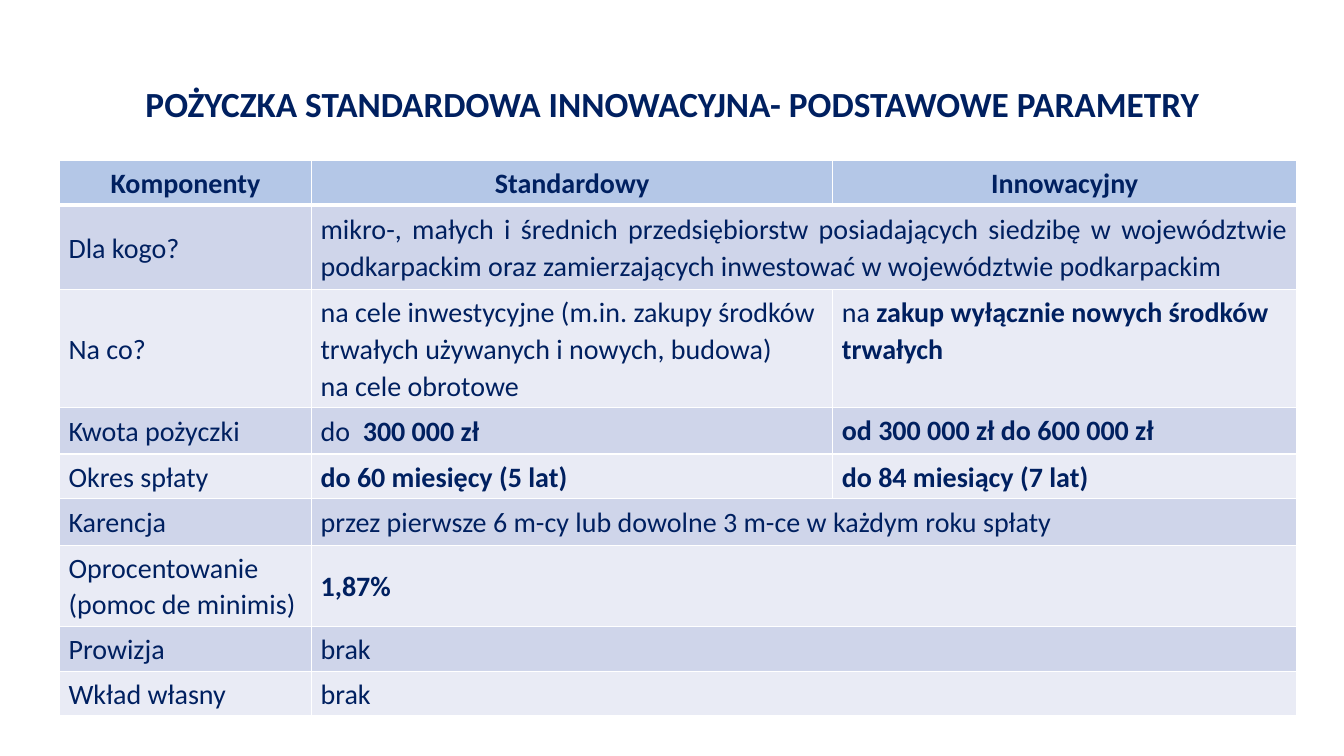
from lxml.etree import SubElement
from pptx import Presentation
from pptx.dml.color import RGBColor
from pptx.enum.text import MSO_ANCHOR as Anchor, MSO_AUTO_SIZE as AutoSize, PP_ALIGN as Align
from pptx.oxml.ns import qn
from pptx.util import Pt

PX = 9144
NAVY = RGBColor(0x00, 0x20, 0x60)
WHITE = RGBColor(0xFF, 0xFF, 0xFF)
HEADER_BLUE = RGBColor(0xB4, 0xC7, 0xE7)
BAND_DARK = RGBColor(0xCF, 0xD5, 0xEA)
BAND_LIGHT = RGBColor(0xE9, 0xEB, 0xF5)

TITLE = "POŻYCZKA STANDARDOWA INNOWACYJNA- PODSTAWOWE PARAMETRY "
TITLE_BOX = (96, 71, 1150, 68)
TABLE_BOX = (59, 159, 1227, 535)
COLUMN_WIDTHS = (250, 517, 460)
ROW_HEIGHTS = (42, 84, 113, 46, 42, 46, 78, 42, 42)
CELL_INSETS = {"margin_left": 9, "margin_top": 4, "margin_right": 9, "margin_bottom": 4}

# B
ROWS = (
    ("*Komponenty*", "*Standardowy*", "*Innowacyjny*"),
    ("Dla kogo?", "mikro-, małych i średnich przedsiębiorstw posiadających siedzibę w "
     "województwie podkarpackim oraz zamierzających inwestować w województwie podkarpackim"),
    ("Na co?", "na cele inwestycyjne (m.in. zakupy środków trwałych używanych i nowych, budowa)\n"
     "na cele obrotowe", "na *zakup wyłącznie nowych środków trwałych*"),
    ("Kwota pożyczki", "do  *300 000 zł*", "*od 300 000 zł do 600 000 zł*"),
    ("Okres spłaty", "*do 60 miesięcy (5 lat)*", "*do 84 miesiący (7 lat)*"),
    ("Karencja", "przez pierwsze 6 m-cy lub dowolne 3 m-ce w każdym roku spłaty"),
    ("Oprocentowanie\n(pomoc de minimis)", "*1,87%*"),
    ("Prowizja", "brak"),
    ("Wkład własny", "brak"),
)


def set_all(target, values):
    for name, value in values.items():
        setattr(target, name, value)


def write_span(para, text, size, bold):
    span = para.add_run()
    span.text = text
    set_all(span.font, {"name": "Calibri", "size": Pt(size), "bold": bold})
    span.font.color.rgb = NAVY


def write_cell(cell, marked_text, align):
    frame = cell.text_frame
    for number, line in enumerate(marked_text.split("\n")):
        para = frame.add_paragraph() if number else frame.paragraphs[0]
        set_all(para, {"alignment": align, "line_spacing": 1.07})
        for position, text in enumerate(line.split("*")):
            if text:
                write_span(para, text, 20, position % 2 == 1)


def add_borders(cell, bottom_width):
    properties = cell._tc.get_or_add_tcPr()
    for side, width in (("L", 1), ("R", 1), ("T", 1), ("B", bottom_width)):
        line = SubElement(properties, qn(f"a:ln{side}"), w=str(Pt(width)))
        fill = SubElement(line, qn("a:solidFill"))
        SubElement(fill, qn("a:srgbClr"), val=str(WHITE))


def fill_cell(cell, color):
    cell.fill.solid()
    cell.fill.fore_color.rgb = color


def add_title(page, box):
    title = page.shapes.title
    set_all(title, dict(zip(("left", "top", "width", "height"), (PX * n for n in box))))
    set_all(title.text_frame, {"auto_size": AutoSize.NONE, "word_wrap": True,
                               "vertical_anchor": Anchor.MIDDLE})
    para = title.text_frame.paragraphs[0]
    set_all(para, {"alignment": Align.CENTER, "line_spacing": 0.9})
    write_span(para, TITLE, 25.2, True)


def add_loan_table(page, box):
    table = page.shapes.add_table(len(ROWS), len(COLUMN_WIDTHS), *(PX * n for n in box)).table
    for column, width in zip(table.columns, COLUMN_WIDTHS):
        column.width = PX * width
    for row, height in zip(table.rows, ROW_HEIGHTS):
        row.height = PX * height
    for row_number, texts in enumerate(ROWS):
        header = row_number == 0
        color = HEADER_BLUE if header else (BAND_LIGHT, BAND_DARK)[row_number % 2]
        for column_number in range(len(COLUMN_WIDTHS)):
            cell = table.cell(row_number, column_number)
            set_all(cell, {name: PX * inset for name, inset in CELL_INSETS.items()})
            top_anchored = header or column_number == 2
            cell.vertical_anchor = Anchor.TOP if top_anchored else Anchor.MIDDLE
            add_borders(cell, 3 if header else 1)
            fill_cell(cell, color)
        for column_number, text in enumerate(texts):
            justified = row_number == 1 and column_number == 1
            align = Align.CENTER if header else Align.JUSTIFY if justified else Align.LEFT
            write_cell(table.cell(row_number, column_number), text, align)
        if len(texts) == 2:
            table.cell(row_number, 1).merge(table.cell(row_number, 2))


def main():
    deck = Presentation()
    set_all(deck, {"slide_width": PX * 1333, "slide_height": PX * 750})
    page = deck.slides.add_slide(deck.slide_layouts[5])
    add_title(page, TITLE_BOX)
    add_loan_table(page, TABLE_BOX)
    deck.save("out.pptx")


if __name__ == "__main__":
    main()
